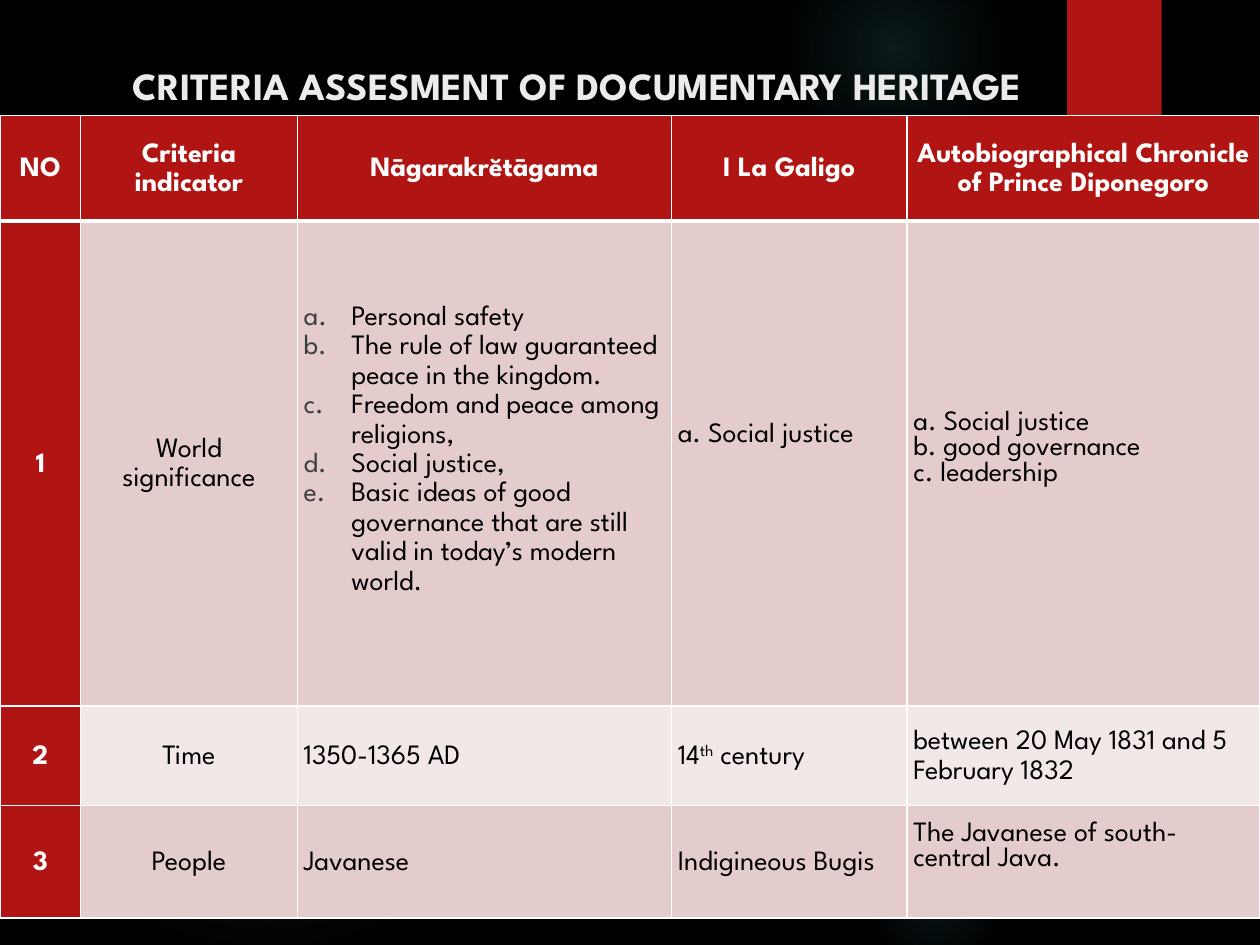
import pptx
import pptx.util
import pptx.oxml
import pptx.oxml.ns
import pptx.dml.color
import pptx.enum.shapes
import pptx.enum.text
from dataclasses import dataclass

Align = pptx.enum.text.PP_ALIGN
Anchor = pptx.enum.text.MSO_ANCHOR
Shape = pptx.enum.shapes.MSO_SHAPE
WIDE, HIGH = pptx.util.Inches(10), pptx.util.Inches(7.5)


@dataclass(frozen=True)
class Theme:
    font: str = "League Spartan"
    back: str = "000000"
    red: str = "B01513"
    glow: str = "50B9C1"
    title: str = "EBEBEB"
    white: str = "FFFFFF"
    ink: str = "000000"
    mark: str = "3B3E41"
    bands: tuple = ("E4CCCC", "F2E8E7")
    head: int = 22
    body: int = 16
    loose: float = 1.15


THEME = Theme()

# Shares of the slide, in percent
COLS = [6.4, 17.2, 29.7, 18.7, 28]
ROWS = [11.2, 51.33, 10.53, 11.87]
TOP = 12.2

# Left, top, size (inches), then gradient stops as place: alpha
GLOWS = [
    ((62.2, -6.67, 17.5, 23.33), {0: 14, 36: 7, 73: 0}),
    ((68.9, 88.93, 10.8, 14.4), {0: 9, 36: 5, 66: 0}),
    ((-1.7, 38.93, 45.8, 61.07), {0: 11, 36: 10, 75: 0}),
]

HEADS = [["NO"], ["Criteria", "indicator"], ["Nāgarakrĕtāgama"], ["I La Galigo"],
         ["Autobiographical Chronicle of Prince Diponegoro"]]
BODY = [
    [["1"], ["World significance"],
     ["Personal safety",
      "The rule of law guaranteed peace in the kingdom.",
      "Freedom and peace among religions,",
      "Social justice,",
      "Basic ideas of good governance that are still valid in today’s modern world."],
     ["a. Social justice"],
     ["a. Social justice", "b. good governance", "c. leadership"]],
    [["2"], ["Time"], ["1350-1365 AD"],
     [("14", ("th", 30), " century")],
     ["between 20 May 1831 and 5 February 1832"]],
    [["3"], ["People"], ["Javanese"], ["Indigineous Bugis"],
     ["The Javanese of south-central Java."]],
]
LIST = (1, 2)
# Single-spaced cells that sit above the middle, with their bottom inset
TIGHT = {(1, 3): 0.44, (1, 4): 0.23, (3, 4): 0.23}
LIFT = {LIST: 0.23, **TIGHT}


def rgb(code):
    return pptx.dml.color.RGBColor.from_string(code)


def across(share):
    return round(WIDE * share / 100)


def down(share):
    return round(HIGH * share / 100)


def area(left, top, width, height):
    return across(left), down(top), across(width), down(height)


def node(xml):
    tag = xml[1:].replace("/", " ").replace(">", " ").split()[0]
    names = pptx.oxml.ns.nsdecls("a")
    return pptx.oxml.parse_xml(xml.replace(tag, f"{tag} {names}", 1))


def color(code, alpha=100):
    return (f'<a:srgbClr val="{code}"><a:alpha val="{alpha * 1000}"/></a:srgbClr>')


def letter(para):
    props = para._p.get_or_add_pPr()
    props.set("marL", str(pptx.util.Inches(0.38)))
    props.set("indent", str(-pptx.util.Inches(0.38)))
    for xml in (f"<a:buClr>{color(THEME.mark)}</a:buClr>",
                '<a:buAutoNum type="alphaLcPeriod"/>',
                f'<a:tabLst><a:tab pos="{pptx.util.Inches(0.75)}" algn="l"/></a:tabLst>'):
        props.append(node(xml))


def write(frame, lines, size=THEME.body, ink=THEME.ink, bold=False,
          align=Align.LEFT, space=1.0, listed=False):
    for i, line in enumerate(lines):
        para = frame.add_paragraph() if i else frame.paragraphs[0]
        if listed:
            letter(para)
        para.alignment, para.line_spacing = align, space
        for part in [line] if isinstance(line, str) else line:
            text, base = (part, 0) if isinstance(part, str) else part
            run = para.add_run()
            run.text = text
            font = run.font
            font.name, font.size, font.bold = THEME.font, pptx.util.Pt(size), bold
            font.color.rgb = rgb(ink)
            if base:
                run._r.get_or_add_rPr().set("baseline", str(base * 1000))


def block(slide, kind, box):
    shape = slide.shapes.add_shape(kind, *area(*box))
    shape.shadow.inherit = False
    shape.line.fill.background()
    shape.fill.solid()
    shape.fill.fore_color.rgb = rgb(THEME.red)
    return shape


def glow(slide, box, stops):
    shape = block(slide, Shape.OVAL, box)
    marks = "".join(f'<a:gs pos="{place * 1000}">{color(THEME.glow, alpha)}</a:gs>'
                    for place, alpha in stops.items())
    fill = node(f'<a:gradFill><a:gsLst>{marks}</a:gsLst><a:path path="circle">'
                '<a:fillToRect l="50000" t="50000" r="50000" b="50000"/>'
                '</a:path></a:gradFill>')
    props = shape.element.spPr
    props.replace(props.find(pptx.oxml.ns.qn("a:solidFill")), fill)


def title(slide, text):
    shape = slide.shapes.title
    shape.left, shape.top, shape.width, shape.height = area(7.2, 5.87, 77.2, 17.2)
    frame = shape.text_frame
    frame.word_wrap, frame.vertical_anchor = True, Anchor.TOP
    write(frame, [text], size=THEME.head, ink=THEME.title, bold=True, align=Align.CENTER)
    # Bring the title in front of the glows
    shape.element.getparent().append(shape.element)


def border(cell, row):
    props = cell._tc.get_or_add_tcPr()
    thick = {0: "B", 1: "T"}.get(row)
    for i, side in enumerate("LRTB"):
        width = pptx.util.Pt(3 if side == thick else 1)
        props.insert(i, node(f'<a:ln{side} w="{width}"><a:solidFill>'
                             f'{color(THEME.white)}</a:solidFill></a:ln{side}>'))


def fill(cell, lines, row, col):
    strong = row == 0 or col == 0
    cell.fill.solid()
    cell.fill.fore_color.rgb = rgb(THEME.red if strong else THEME.bands[(row - 1) % 2])
    cell.vertical_anchor = Anchor.MIDDLE
    cell.margin_left = cell.margin_right = pptx.util.Inches(0.05)
    cell.margin_top = 0
    cell.margin_bottom = pptx.util.Inches(LIFT.get((row, col), 0))
    border(cell, row)
    write(cell.text_frame, lines, bold=strong,
          ink=THEME.white if strong else THEME.ink,
          align=Align.CENTER if row == 0 or col < 2 else Align.LEFT,
          space=1.0 if (row, col) in TIGHT else THEME.loose,
          listed=(row, col) == LIST)


def grid(slide, data):
    box = area(0, TOP, sum(COLS), sum(ROWS))
    table = slide.shapes.add_table(len(ROWS), len(COLS), *box).table
    for col, share in zip(table.columns, COLS):
        col.width = across(share)
    for row, share in zip(table.rows, ROWS):
        row.height = down(share)
    for r, row in enumerate(data):
        for c, lines in enumerate(row):
            fill(table.cell(r, c), lines, r, c)


def main():
    deck = pptx.Presentation()
    deck.slide_width, deck.slide_height = WIDE, HIGH
    slide = deck.slides.add_slide(deck.slide_layouts[5])
    slide.background.fill.solid()
    slide.background.fill.fore_color.rgb = rgb(THEME.back)
    for box, stops in GLOWS:
        glow(slide, box, stops)
    block(slide, Shape.RECTANGLE, (84.7, 0, 7.5, 16))
    title(slide, "CRITERIA ASSESMENT OF DOCUMENTARY HERITAGE")
    grid(slide, [HEADS, *BODY])
    deck.save("out.pptx")


if __name__ == "__main__":
    main()
